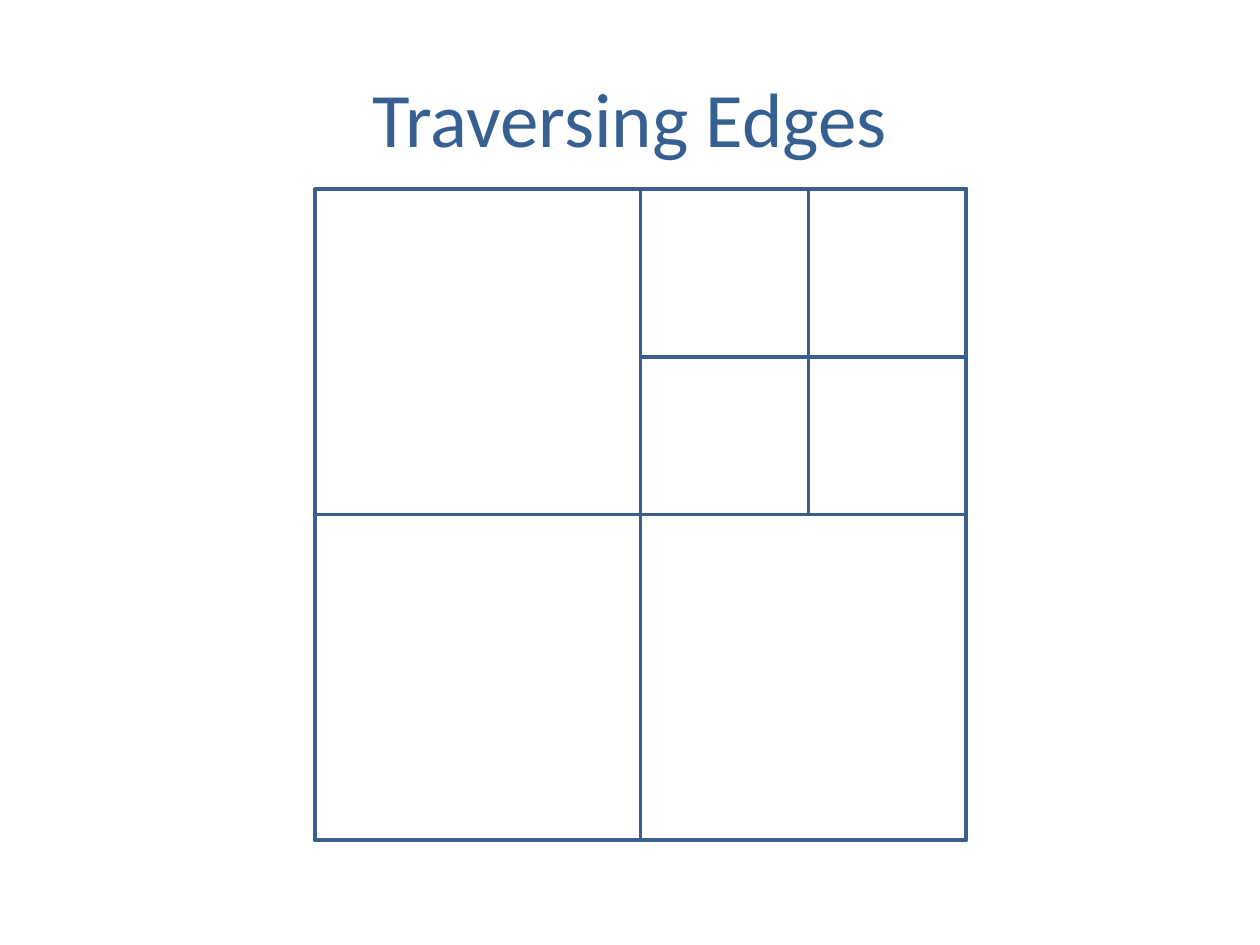
from itertools import product

from pptx import Presentation
from pptx.dml.color import RGBColor
from pptx.enum.shapes import MSO_SHAPE
from pptx.enum.text import MSO_ANCHOR, PP_ALIGN
from pptx.util import Pt

RECTANGLE = MSO_SHAPE.RECTANGLE
MIDDLE = MSO_ANCHOR.MIDDLE
CENTER = PP_ALIGN.CENTER

TITLE_COLOR = "376092"
EDGE_COLOR = "3A5F8C"
TITLE_FONT = {"name": "Calibri", "size": Pt(44)}
TITLE_FRAME = {"word_wrap": True, "vertical_anchor": MIDDLE}


def color(hex_value):
    return RGBColor.from_string(hex_value)


def apply(target, values):
    for name, value in values.items():
        setattr(target, name, value)


def add_title(slide, box, wording):
    frame = slide.shapes.add_textbox(*map(Pt, box)).text_frame
    apply(frame, TITLE_FRAME)
    heading = frame.paragraphs[0]
    heading.alignment = CENTER
    run = heading.add_run()
    run.text = wording
    apply(run.font, TITLE_FONT)
    run.font.color.rgb = color(TITLE_COLOR)


def add_cell(slide, box):
    cell = slide.shapes.add_shape(RECTANGLE, *map(Pt, box))
    cell.shadow.inherit = False
    cell.fill.background()
    cell.line.color.rgb = color(EDGE_COLOR)
    cell.line.width = Pt(2)


def split_box(box, cut):
    """Return the four quadrants of a box, cut at the same distance both ways."""
    left, top, width, height = box
    columns = [(left, cut), (left + cut, width - cut)]
    rows = [(top, cut), (top + cut, height - cut)]
    return [(x, y, w, h) for (y, h), (x, w) in product(rows, columns)]


def add_quadtree(slide, box):
    quadrants = split_box(box, box[2] / 2)
    top_right = quadrants[1]
    # Root, its quadrants, then the refined top right quadrant
    for cell_box in [box, *quadrants, *split_box(top_right, 96)]:
        add_cell(slide, cell_box)


def main():
    deck = Presentation()
    deck.slide_width, deck.slide_height = Pt(720), Pt(540)
    slide = deck.slides.add_slide(deck.slide_layouts[6])
    add_title(slide, (36, 21.6, 648, 90), "Traversing Edges")
    add_quadtree(slide, (180, 108, 372, 372))
    deck.save("out.pptx")


if __name__ == "__main__":
    main()
